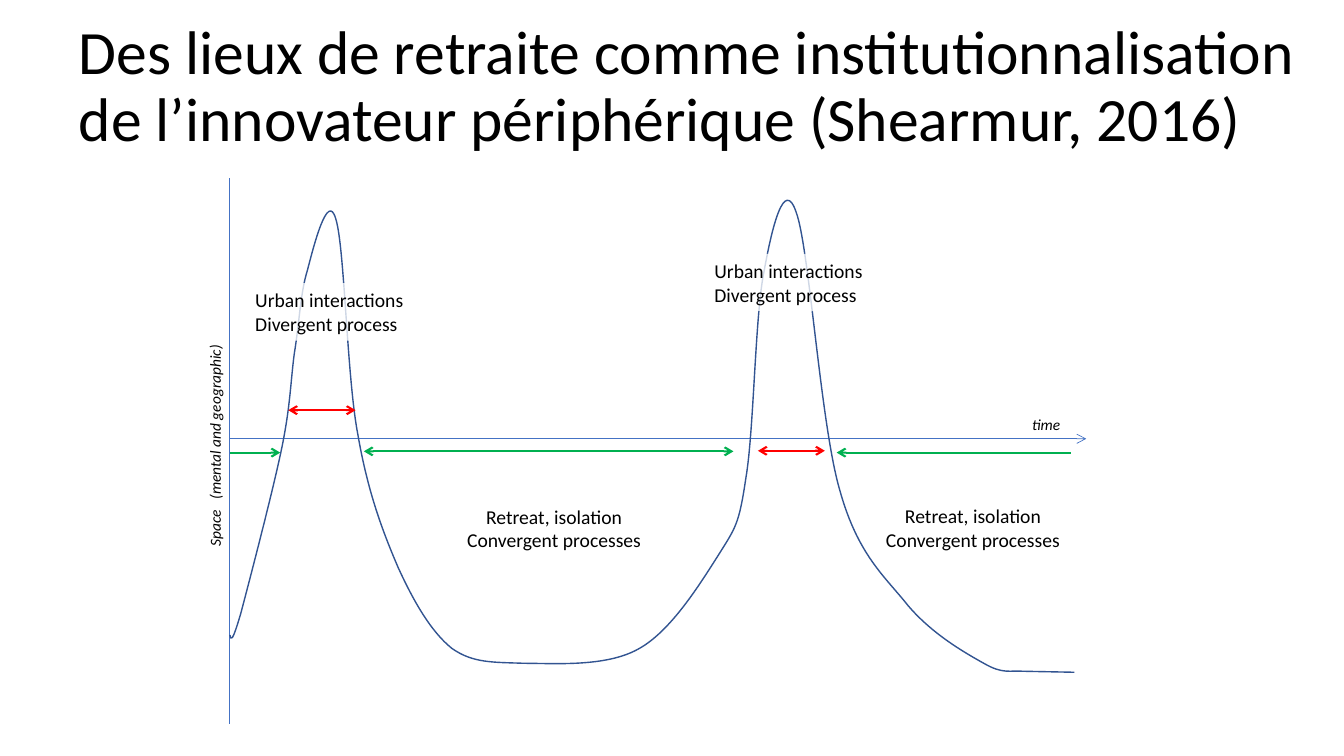
import lxml.etree
import pptx
import pptx.dml.color
import pptx.enum.shapes
import pptx.enum.text
import pptx.oxml.ns
import pptx.util

Pt = pptx.util.Pt
qn = pptx.oxml.ns.qn

COLORS = {
    "text": "000000",
    "axis": "4472C4",
    "curve": "325491",
    "retreat": "00B050",
    "urban": "FF0000",
    "label": "FFFFFF",
}
URBAN_LINES = ["Urban interactions", "Divergent process"]
RETREAT_LINES = ["Retreat, isolation", "Convergent processes"]
CURVE_BOX = (164.2, 142.6, 767.5, 480.2)
CURVE_START = (767.5, 480.2)
CURVE_SHOULDER = (731.5, 479.5)
CURVE_SEGMENTS = [
    ((720.7, 478.8), (716.4, 481.7), (702.7, 473.8)),
    ((688.3, 465.8), (666, 452.9), (648.7, 432.7)),
    ((632.2, 411.8), (612.7, 396.7), (599.8, 349.9)),
    ((586.1, 303.1), (578.2, 177.8), (568.8, 151.9)),
    ((560.2, 126), (551.5, 162), (545.8, 193.7)),
    ((539.3, 224.6), (538.6, 307.4), (532.8, 341.3)),
    ((527.8, 375.1), (525.6, 376.6), (512.6, 397.4)),
    ((499.7, 417.6), (478.8, 451.4), (455.8, 463.7)),
    ((432.7, 476.6), (396, 473.8), (374.4, 473.8)),
    ((352.1, 473), (337.7, 473.8), (322.6, 463)),
    ((308.2, 451.4), (295.9, 430.6), (284.4, 405.4)),
    ((273.6, 380.2), (262.8, 352.1), (255.6, 310.3)),
    ((247.7, 269.3), (246.2, 175.7), (239.8, 156.2)),
    ((234, 136.1), (223.9, 176.4), (219.6, 193)),
    ((214.6, 208.8), (213.8, 231.1), (210.2, 252.7)),
    ((207.4, 274.3), (207.4, 290.9), (200.9, 321.8)),
    ((194.4, 352.8), (177.8, 416.2), (172.1, 437.8)),
    ((165.6, 460.1), (164.9, 457.2), (164.2, 453.6)),
]


def rgb(name):
    return pptx.dml.color.RGBColor.from_string(COLORS[name])


def add_text(slide, lines, left, top, width, height, *, size=14, italic=False,
             align="LEFT", wrap=False, spacing=None, rotation=0,
             fill=None, opacity=100, first_gap=0):
    shape = slide.shapes.add_textbox(Pt(left), Pt(top), Pt(width), Pt(height))
    shape.rotation = rotation
    if fill:
        shape.fill.solid()
        shape.fill.fore_color.rgb = rgb(fill)
        color = shape.fill._xPr.find(qn("a:solidFill"))[0]
        lxml.etree.SubElement(color, qn("a:alpha"), val=str(opacity * 1000))
    frame = shape.text_frame
    frame.word_wrap = wrap
    frame.auto_size = pptx.enum.text.MSO_AUTO_SIZE.SHAPE_TO_FIT_TEXT
    for index, line in enumerate(lines):
        paragraph = frame.add_paragraph() if index else frame.paragraphs[0]
        paragraph.alignment = getattr(pptx.enum.text.PP_ALIGN, align)
        paragraph.line_spacing = spacing
        for part in line.partition(" ") if first_gap else [line]:
            run = paragraph.add_run()
            run.text = part
            run.font.name = "Calibri"
            run.font.size = Pt(size)
            run.font.italic = italic
            run.font.color.rgb = rgb("text")
            if part == " ":
                run.font._element.set("spc", str(first_gap * 100))


def add_line(slide, start, end, color, width, head=False, tail=False):
    line = slide.shapes.add_connector(
        pptx.enum.shapes.MSO_CONNECTOR.STRAIGHT,
        Pt(start[0]), Pt(start[1]), Pt(end[0]), Pt(end[1]))
    line.line.color.rgb = rgb(color)
    line.line.width = Pt(width)
    outline = line.line._get_or_add_ln()
    for tag, shown in (("a:headEnd", head), ("a:tailEnd", tail)):
        if shown:
            lxml.etree.SubElement(outline, qn(tag), type="arrow")
    lxml.etree.SubElement(line._element.spPr, qn("a:effectLst"))


def add_curve(slide, box, start, shoulder, segments):
    left, top, right, bottom = box
    builder = slide.shapes.build_freeform(Pt(left), Pt(top))
    builder.add_line_segments([(Pt(right), Pt(bottom))], close=False)
    curve = builder.convert_to_shape()
    outline = next(curve._element.iter(qn("a:path")))
    for command in list(outline):
        outline.remove(command)
    commands = [("a:moveTo", [start]), ("a:lnTo", [shoulder])]
    commands += [("a:cubicBezTo", segment) for segment in segments]
    for tag, points in commands:
        command = lxml.etree.SubElement(outline, qn(tag))
        for x, y in points:
            lxml.etree.SubElement(command, qn("a:pt"),
                                  x=str(int(Pt(x - left))),
                                  y=str(int(Pt(y - top))))
    curve.shadow.inherit = False
    curve.fill.background()
    curve.line.color.rgb = rgb("curve")
    curve.line.width = Pt(1)


def main():
    presentation = pptx.Presentation()
    presentation.slide_width = Pt(960)
    presentation.slide_height = Pt(540)
    slide = presentation.slides.add_slide(presentation.slide_layouts[6])

    add_line(slide, (164.2, 127.4), (164.2, 517.5), "axis", 0.5)
    add_line(slide, (164.2, 313.4), (775.9, 313.4), "axis", 0.5, tail=True)
    add_curve(slide, CURVE_BOX, CURVE_START, CURVE_SHOULDER, CURVE_SEGMENTS)

    title = ("Des lieux de retraite comme institutionnalisation "
             "de l’innovateur périphérique (Shearmur, 2016)")
    add_text(slide, [title], 49.3, 11.9, 924.5, 103,
             size=44, wrap=True, spacing=0.9)

    for left, right, y, color, head, tail in [
        (597.6, 765.1, 323.3, "retreat", True, False),
        (259.9, 523.9, 322.4, "retreat", True, True),
        (164.6, 200.2, 323.3, "retreat", False, True),
        (205.9, 254, 293, "urban", True, True),
        (541.4, 589.2, 322, "urban", True, True),
    ]:
        add_line(slide, (left, y), (right, y), color, 1.5, head, tail)

    for left, top in [(175.2, 202.3), (503.2, 181.4)]:
        add_text(slide, URBAN_LINES, left, top, 121.7, 41,
                 fill="label", opacity=77)
    for left, top in [(325.6, 357), (624.8, 356.4)]:
        add_text(slide, RETREAT_LINES, left, top, 140.4, 41, align="CENTER")

    add_text(slide, ["Space (mental and geographic)"], 74.4, 307.8, 158.4, 20.9,
             size=11, italic=True, rotation=270, first_gap=5)
    add_text(slide, ["time"], 730.1, 293, 35.3, 20.9, size=11, italic=True)

    presentation.save("out.pptx")


if __name__ == "__main__":
    main()
